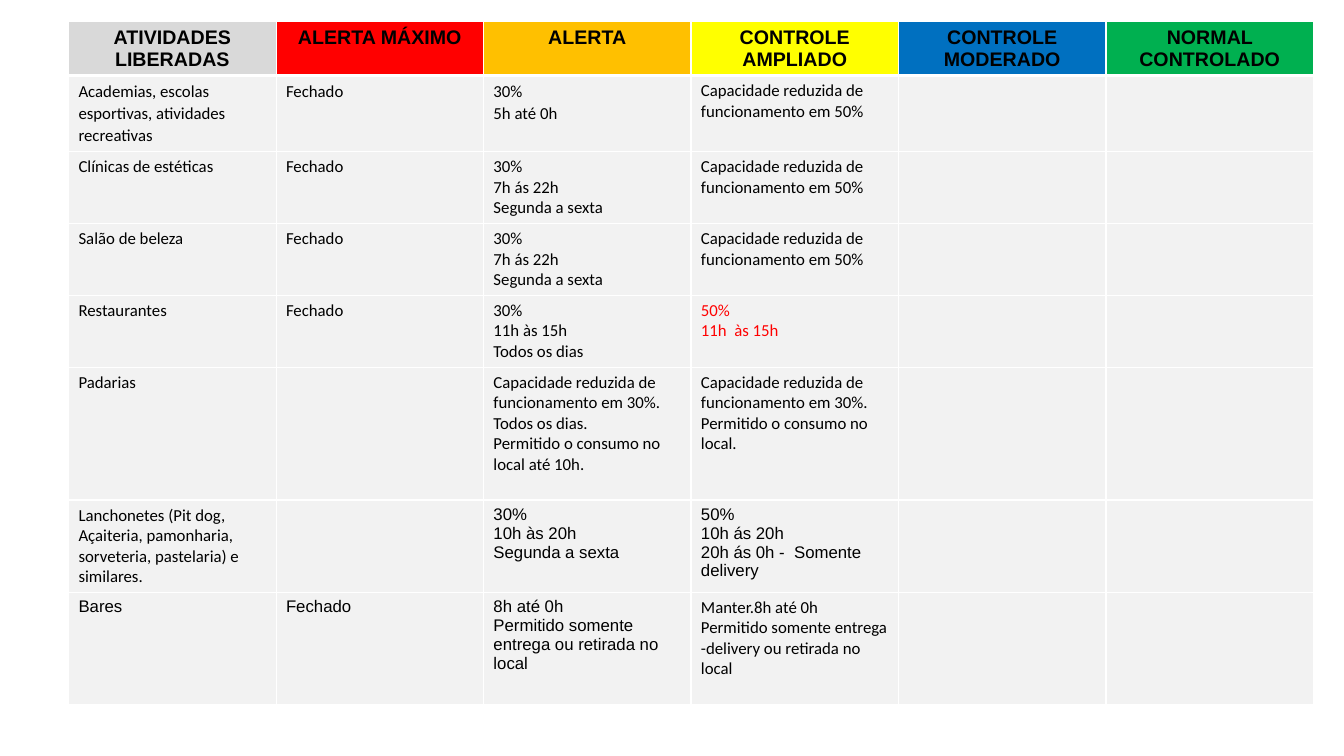
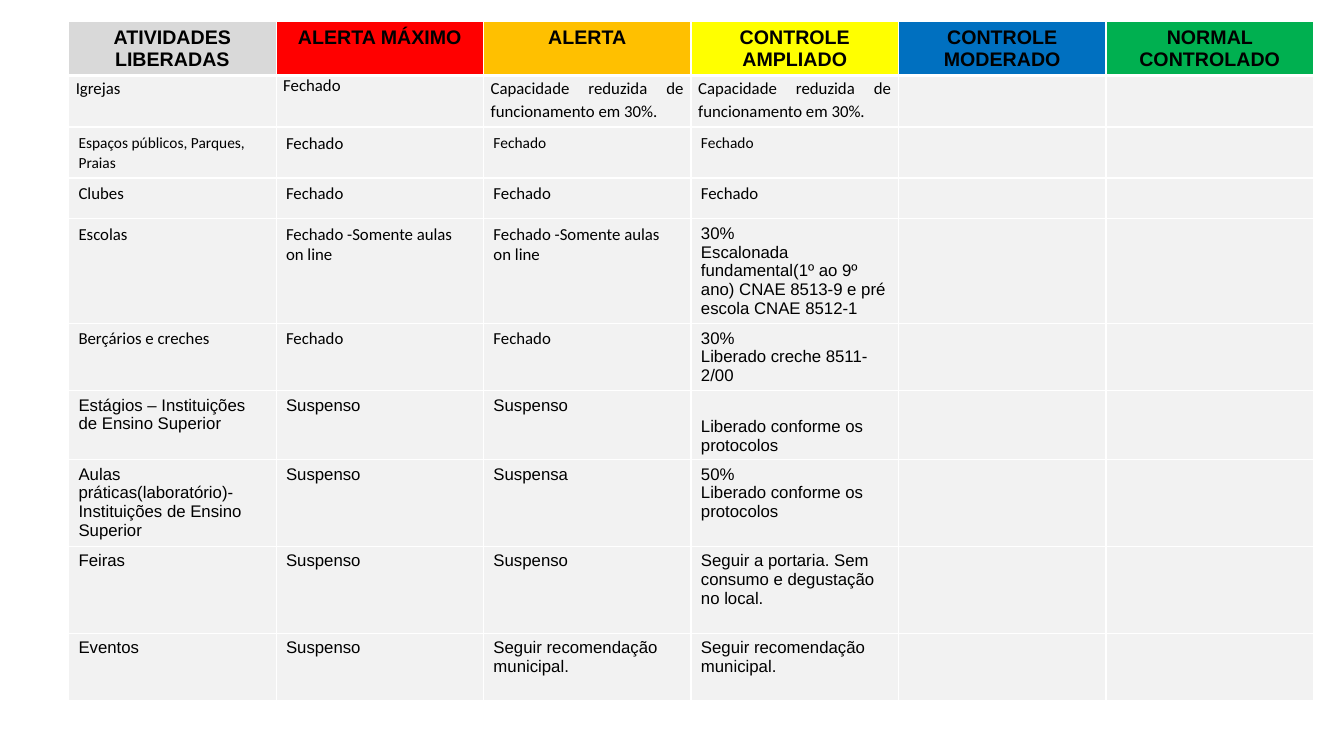
import pptx
import pptx.util
import pptx.dml.color
import pptx.enum.text
import pptx.oxml
import pptx.oxml.ns

Cm = pptx.util.Cm
RGBColor = pptx.dml.color.RGBColor
CENTER = pptx.enum.text.PP_ALIGN.CENTER
JUSTIFY = pptx.enum.text.PP_ALIGN.JUSTIFY

# Shared colours
BLACK = RGBColor(0, 0, 0)
RED = RGBColor(0xFF, 0, 0)
WHITE = RGBColor(0xFF, 0xFF, 0xFF)
BODY_FILL = RGBColor(0xF2, 0xF2, 0xF2)
HEADERS = [
    ("ATIVIDADES LIBERADAS", RGBColor(0xD9, 0xD9, 0xD9)),
    ("ALERTA MÁXIMO", RED),
    ("ALERTA", RGBColor(0xFF, 0xC0, 0)),
    ("CONTROLE AMPLIADO", RGBColor(0xFF, 0xFF, 0)),
    ("CONTROLE MODERADO", RGBColor(0, 0x70, 0xC0)),
    ("NORMAL CONTROLADO", RGBColor(0, 0xB0, 0x50)),
]

# Shared table geometry
TABLE_LEFT, TABLE_TOP = Cm(1.73), Cm(0.53)
COLUMN_WIDTH = Cm(5.23)
HEADER_HEIGHT = 1.37

# Text formats
CALIBRI = {"font": "Calibri"}
ARIAL = {"font": "Arial"}
LOOSE = {"spacing": 1.07}
SMALL = {"spacing": 1.07, "size": 11}
TIGHT = {"margin_x": 0.18, "margin_top": 0}
JUSTIFIED = {**TIGHT, "align": JUSTIFY, "spacing": 1.15}

# Each row: height in cm, then cells as text or (text, format)
HALF = "Capacidade reduzida de funcionamento em 50%"
THIRD = "Capacidade reduzida de funcionamento em 30%."
EVENING = "30%\n7h ás 22h\nSegunda a sexta"
ONLINE = "Fechado -Somente aulas on line"
PROTOCOLS = "Liberado conforme os protocolos"
MUNICIPAL = "Seguir recomendação municipal."

BUSINESS_ROWS = [
    (1.92, [("Academias, escolas esportivas, atividades recreativas", LOOSE),
            ("Fechado", LOOSE), ("30%\n5h até 0h", LOOSE), HALF]),
    (1.81, ["Clínicas de estéticas", "Fechado", EVENING, HALF]),
    (1.81, ["Salão de beleza", "Fechado", EVENING, HALF]),
    (1.81, ["Restaurantes", "Fechado", "30%\n11h às 15h\nTodos os dias",
            ("50%\n11h  às 15h", {"color": RED})]),
    (3.35, ["Padarias", "",
            THIRD + "\nTodos os dias.\nPermitido o consumo no local até 10h.",
            THIRD + " Permitido o consumo no local."]),
    (2.32, ["Lanchonetes (Pit dog, Açaiteria, pamonharia, sorveteria, "
            "pastelaria) e similares.", "",
            ("30%\n10h às 20h\nSegunda a sexta", ARIAL),
            ("50%\n10h ás 20h\n20h ás 0h -  Somente delivery", ARIAL)]),
    (2.82, [("Bares", ARIAL), ("Fechado", ARIAL),
            ("8h até 0h\nPermitido somente entrega ou retirada no local", ARIAL),
            "Manter.8h até 0h\n"
            "Permitido somente entrega -delivery ou retirada no local"]),
]

PUBLIC_ROWS = [
    (1.3, [("Igrejas", JUSTIFIED), ("Fechado", TIGHT),
           (THIRD, JUSTIFIED), (THIRD, JUSTIFIED)]),
    (1.28, [("Espaços públicos, Parques, Praias", SMALL), ("Fechado", LOOSE),
            ("Fechado", SMALL), ("Fechado", SMALL)]),
    (1.03, ["Clubes", "Fechado", "Fechado", "Fechado"]),
    (2.64, ["Escolas", ONLINE, ONLINE,
            ("30%\nEscalonada fundamental(1º ao 9º ano) CNAE 8513-9 "
             "e pré escola CNAE 8512-1", ARIAL)]),
    (1.69, ["Berçários e creches", "Fechado", "Fechado",
            ("30%\nLiberado creche 8511-2/00", ARIAL)]),
    (1.73, [("Estágios – Instituições de Ensino Superior", ARIAL),
            ("Suspenso", ARIAL), ("Suspenso", ARIAL),
            (PROTOCOLS, {**ARIAL, "margin_top": 0.66})]),
    (2.18, [("Aulas práticas(laboratório)- Instituições de Ensino Superior", ARIAL),
            ("Suspenso", ARIAL), ("Suspensa", ARIAL),
            ("50%\n" + PROTOCOLS, ARIAL)]),
    (2.19, [("Feiras", ARIAL), ("Suspenso", ARIAL), ("Suspenso", ARIAL),
            ("Seguir a portaria. Sem consumo e degustação no local.", ARIAL)]),
    (1.7, [("Eventos", ARIAL), ("Suspenso", ARIAL),
           (MUNICIPAL, ARIAL), (MUNICIPAL, ARIAL)]),
]


def write_text(cell, text, font="Calibri", size=12, color=BLACK, bold=False,
               align=None, spacing=None, margin_x=0.25, margin_top=0.13):
    cell.margin_left = cell.margin_right = Cm(margin_x)
    cell.margin_top = Cm(margin_top)
    cell.margin_bottom = Cm(min(margin_top, 0.13))
    for index, line in enumerate(text.split("\n")):
        frame = cell.text_frame
        paragraph = frame.add_paragraph() if index else frame.paragraphs[0]
        paragraph.alignment = align
        paragraph.line_spacing = spacing
        run = paragraph.add_run()
        run.text = line
        run.font.name = font
        run.font.size = pptx.util.Pt(size)
        run.font.bold = bold
        run.font.color.rgb = color


def paint_cell(cell, fill, top=1, bottom=1):
    properties = cell._tc.get_or_add_tcPr()
    for side, points in (("L", 1), ("R", 1), ("T", top), ("B", bottom)):
        properties.append(pptx.oxml.parse_xml(
            f'<a:ln{side} {pptx.oxml.ns.nsdecls("a")} w="{pptx.util.Pt(points)}">'
            f'<a:solidFill><a:srgbClr val="{WHITE}"/></a:solidFill></a:ln{side}>'))
    cell.fill.solid()
    cell.fill.fore_color.rgb = fill


presentation = pptx.Presentation()
presentation.slide_width = Cm(33.88)
presentation.slide_height = Cm(19.05)
blank_layout = presentation.slide_layouts[6]

for rows in (BUSINESS_ROWS, PUBLIC_ROWS):
    slide = presentation.slides.add_slide(blank_layout)
    heights = [HEADER_HEIGHT] + [height for height, cells in rows]
    table = slide.shapes.add_table(
        len(heights), len(HEADERS), TABLE_LEFT, TABLE_TOP,
        COLUMN_WIDTH * len(HEADERS), Cm(sum(heights))).table
    table.horz_banding = False
    for column in table.columns:
        column.width = COLUMN_WIDTH
    for table_row, height in zip(table.rows, heights):
        table_row.height = Cm(height)

    # Header row
    for column_index, (title, fill) in enumerate(HEADERS):
        cell = table.cell(0, column_index)
        paint_cell(cell, fill, bottom=3)
        write_text(cell, title, font="Arial", size=14, bold=True, align=CENTER)

    # Activity rows
    for row_index, (height, entries) in enumerate(rows, start=1):
        for column_index in range(len(HEADERS)):
            paint_cell(table.cell(row_index, column_index), BODY_FILL,
                       top=3 if row_index == 1 else 1)
        for column_index, entry in enumerate(entries):
            text, text_format = (entry, CALIBRI) if isinstance(entry, str) else entry
            if text:
                write_text(table.cell(row_index, column_index), text, **text_format)

presentation.save("out.pptx")
